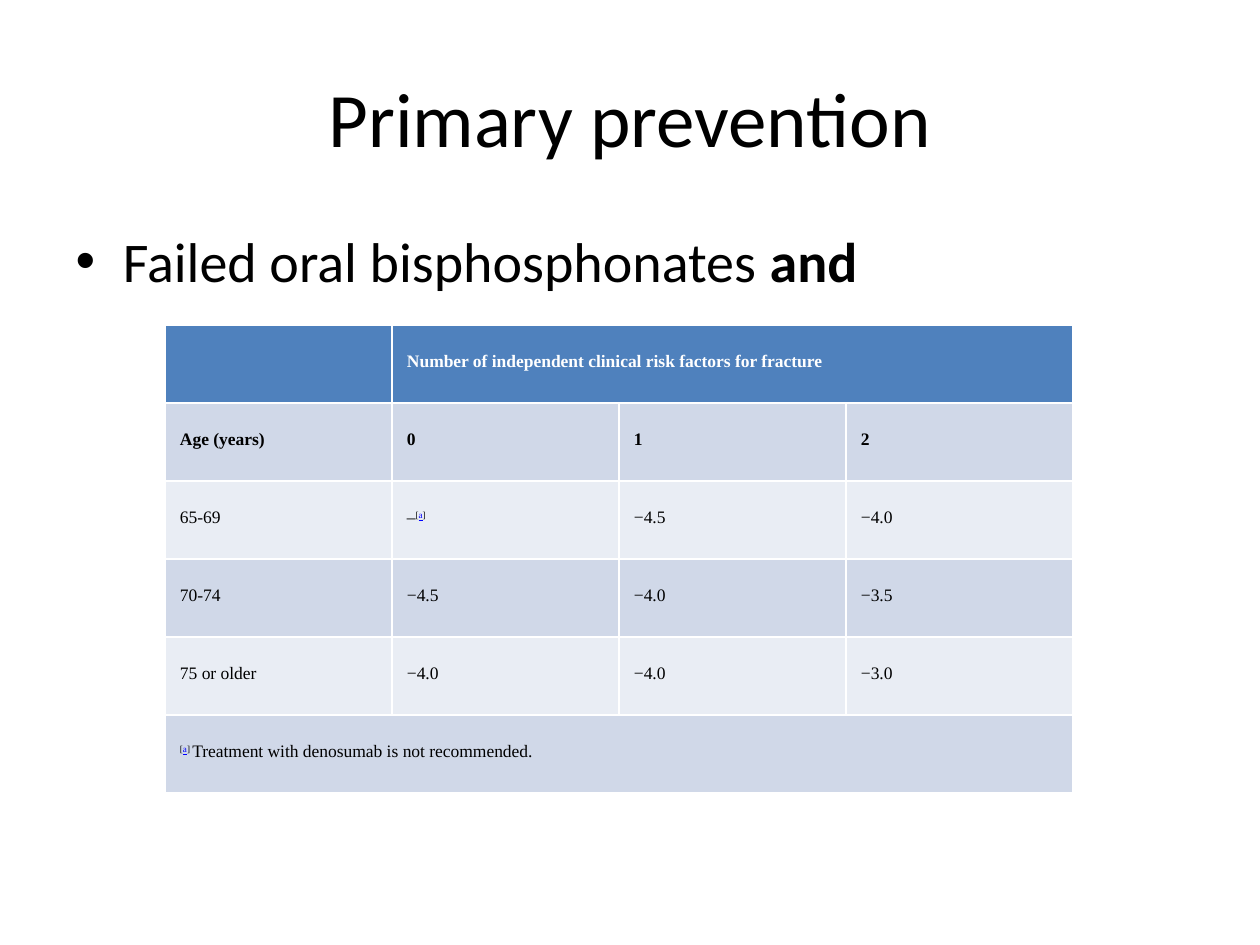
from pptx import Presentation
from pptx.dml.color import RGBColor
from pptx.enum.text import MSO_ANCHOR, PP_ALIGN
from pptx.util import Pt

SCALE = 914400 / 126


def px(n):
    return round(n * SCALE)


def color(value):
    return RGBColor.from_string(value)


class Deck:
    """Holds the style and the current slide, with a method for each kind of element."""

    heading = {"name": "Calibri", "size": Pt(44)}
    bullet = {"name": "Calibri", "size": Pt(32)}
    cell = {"name": "Times New Roman", "size": Pt(10)}
    note = {"size": Pt(9), "baseline": 30000}
    link = {**note, "color": "0000FF", "underline": True}
    black, white = "000000", "FFFFFF"
    header, bands = "4F81BD", ("E9EDF4", "D0D8E8")

    def __init__(self, prs):
        self.s = prs.slides.add_slide(prs.slide_layouts[1])

    def runs(self, p, items, base):
        for text, extra in items:
            r = p.add_run()
            r.text = text
            fmt = {"color": self.black, **base, **extra}
            r.font.color.rgb = color(fmt.pop("color"))
            if "baseline" in fmt:
                r._r.get_or_add_rPr().set("baseline", str(fmt.pop("baseline")))
            for key, value in fmt.items():
                setattr(r.font, key, value)

    def placeholder(self, idx, box, items, base, **para):
        sp = self.s.placeholders[idx]
        for key, value in zip(("left", "top", "width", "height"), box):
            setattr(sp, key, px(value))
        p = sp.text_frame.paragraphs[0]
        for key, value in para.items():
            setattr(p, key, value)
        self.runs(p, items, base)

    def title(self, text, box):
        self.placeholder(0, box, [(text, {})], self.heading, alignment=PP_ALIGN.CENTER)
        self.s.shapes.title.text_frame.vertical_anchor = MSO_ANCHOR.MIDDLE

    def body(self, items, box):
        self.placeholder(1, box, items, self.bullet)

    def fill_cell(self, c, content, base):
        for side in ("left", "top", "right", "bottom"):
            setattr(c, f"margin_{side}", px(15))
        p = c.text_frame.paragraphs[0]
        for key, value in {"line_spacing": Pt(18), "space_after": Pt(9)}.items():
            setattr(p, key, value)
        items = [(content, {})] if isinstance(content, str) else content
        self.runs(p, items, base)

    def table(self, rows, spans, left, top, col_w, row_h):
        n, m = len(rows), max(map(len, rows))
        tbl = self.s.shapes.add_table(
            n, m, px(left), px(top), px(col_w * m), px(row_h * n)).table
        for i, j, end in spans:
            tbl.cell(i, j).merge(tbl.cell(i, end))
        for i, row in enumerate(rows):
            tbl.rows[i].height = px(row_h)
            base = {**self.cell, "bold": i < 2, "color": self.black if i else self.white}
            for j in range(m):
                c = tbl.cell(i, j)
                c.fill.solid()
                c.fill.fore_color.rgb = color(self.bands[i % 2] if i else self.header)
                if j < len(row) and row[j]:
                    self.fill_cell(c, row[j], base)


def main():
    prs = Presentation()
    prs.slide_width, prs.slide_height = px(1260), px(945)
    deck = Deck(prs)
    deck.title("Primary prevention", (63, 38, 1134, 158))
    deck.body([("Failed oral bisphosphonates ", {}), ("and", {"bold": True})],
              (63, 220, 1134, 624))
    mark = [("[", deck.note), ("a", deck.link)]
    rows = [
        ["", "Number of independent clinical risk factors for fracture"],
        ["Age (years)", "0", "1", "2"],
        ["65-69", [("–", {}), *mark, ("]", deck.note)], "−4.5", "−4.0"],
        ["70-74", "−4.5", "−4.0", "−3.5"],
        ["75 or older", "−4.0", "−4.0", "−3.0"],
        [[*mark, ("] ", deck.note), ("Treatment with denosumab is not recommended.", {})]],
    ]
    deck.table(rows, [(0, 1, 3), (5, 0, 3)], 165, 325, 227, 78)
    prs.save("out.pptx")


if __name__ == "__main__":
    main()
